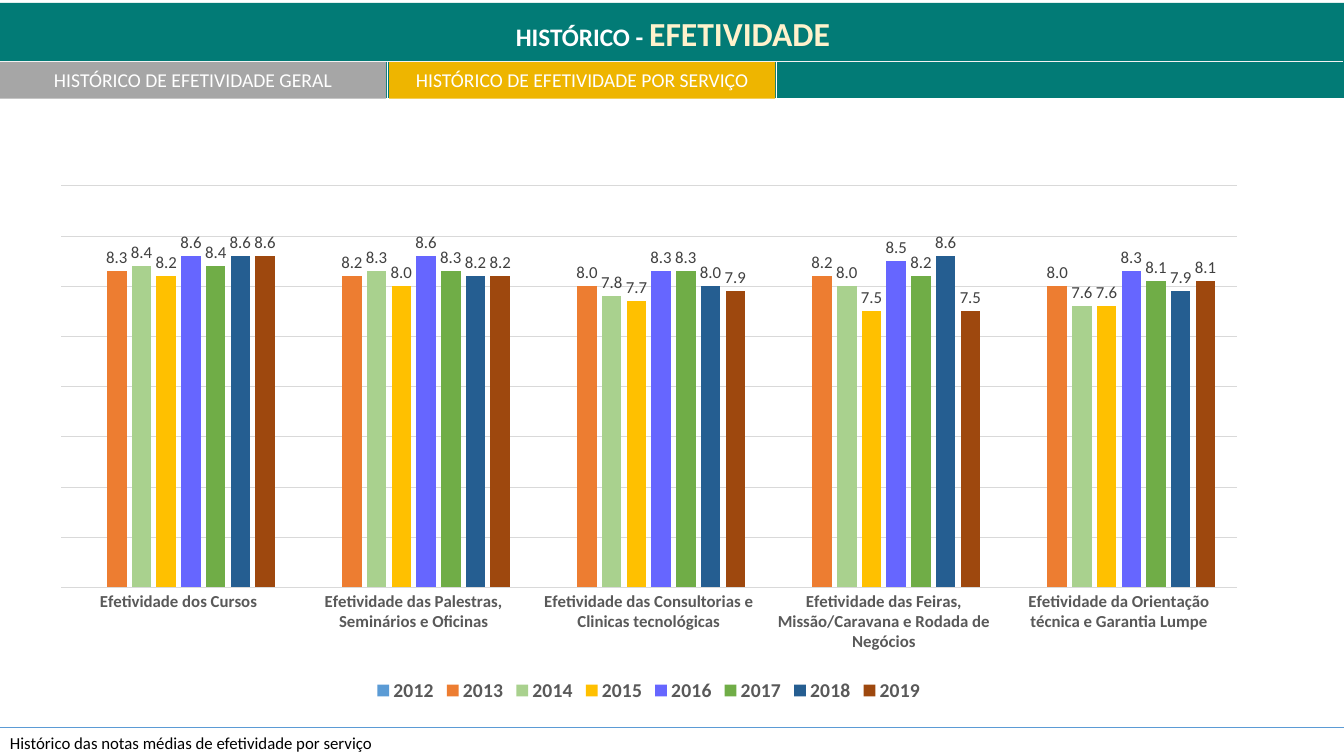
from dataclasses import dataclass

from pptx import Presentation
from pptx import util as u
from pptx.chart import data as chart_data
from pptx.dml.color import RGBColor
from pptx.enum import chart as ch
from pptx.enum import shapes, text
from pptx.oxml import parse_xml
from pptx.oxml.ns import nsdecls

FONT = "Calibri"
TEAL = RGBColor(0x02, 0x7B, 0x76)
GREY = RGBColor(0xA6, 0xA6, 0xA6)
GOLD = RGBColor(0xEE, 0xB5, 0x00)
CREAM = RGBColor(0xFF, 0xF2, 0xCC)
WHITE = RGBColor(0xFF, 0xFF, 0xFF)
OFF_WHITE = RGBColor(0xF2, 0xF2, 0xF2)
BLACK = RGBColor(0, 0, 0)
BLUE = RGBColor(0x5B, 0x9B, 0xD5)
GRID = RGBColor(0xD9, 0xD9, 0xD9)
AXIS_TEXT = RGBColor(0x59, 0x59, 0x59)
LABEL_TEXT = RGBColor(0x40, 0x40, 0x40)


@dataclass
class Tab:
    left: float
    label: str
    color: RGBColor


@dataclass
class Rule:
    start: tuple[float, float]
    end: tuple[float, float]
    color: RGBColor
    width: float


@dataclass
class Year:
    name: str
    scores: tuple[float | None, ...]
    color: RGBColor


def divider(x: float) -> Rule:
    return Rule((x, 0.99), (x, 0.62), WHITE, 0.5)


FOOTER_RULE = Rule((0, 7.22), (13.33, 7.22), BLUE, 0.5)
HEADER_BOTTOM = Rule((-0.03, 0.99), (13.34, 0.99), WHITE, 3)
TITLE_RULE = Rule((-0.02, 0.61), (13.32, 0.61), OFF_WHITE, 1)
GENERAL_TAB = Tab(0, "HISTÓRICO DE EFETIVIDADE GERAL", GREY)
SERVICE_TAB = Tab(3.86, "HISTÓRICO DE EFETIVIDADE POR SERVIÇO", GOLD)

SERVICES = (
    "Efetividade dos Cursos",
    "Efetividade das Palestras, Seminários e Oficinas",
    "Efetividade das Consultorias e Clinicas tecnológicas",
    "Efetividade das Feiras, Missão/Caravana e Rodada de Negócios",
    "Efetividade da Orientação técnica e Garantia Lumpe",
)
YEARS = (
    Year("2012", (None,) * 5, BLUE),
    Year("2013", (8.3, 8.2, 8.0, 8.2, 8.0), RGBColor(0xED, 0x7D, 0x31)),
    Year("2014", (8.4, 8.3, 7.8, 8.0, 7.6), RGBColor(0xA9, 0xD1, 0x8E)),
    Year("2015", (8.2, 8.0, 7.7, 7.5, 7.6), RGBColor(0xFF, 0xC0, 0x00)),
    Year("2016", (8.6, 8.6, 8.3, 8.5, 8.3), RGBColor(0x66, 0x66, 0xFF)),
    Year("2017", (8.4, 8.3, 8.3, 8.2, 8.1), RGBColor(0x70, 0xAD, 0x47)),
    Year("2018", (8.6, 8.2, 8.0, 8.6, 7.9), RGBColor(0x25, 0x5E, 0x91)),
    Year("2019", (8.6, 8.2, 7.9, 7.5, 8.1), RGBColor(0x9E, 0x48, 0x0E)),
)


def style(font, size: float, color: RGBColor, bold: bool = False) -> None:
    font.name = FONT
    font.size = u.Pt(size)
    font.bold = bold
    font.color.rgb = color


def add_block(page, left: float, top: float, width: float, height: float, color: RGBColor):
    block = page.shapes.add_shape(
        shapes.MSO_SHAPE.RECTANGLE,
        u.Inches(left), u.Inches(top), u.Inches(width), u.Inches(height),
    )
    block.shadow.inherit = False
    block.fill.solid()
    block.fill.fore_color.rgb = color
    block.line.fill.background()
    return block


def add_tab(page, tab: Tab) -> None:
    frame = add_block(page, tab.left, 0.61, 3.83, 0.37, tab.color).text_frame
    frame.vertical_anchor = text.MSO_ANCHOR.MIDDLE
    para = frame.paragraphs[0]
    para.text = tab.label
    para.alignment = text.PP_ALIGN.CENTER
    style(para.runs[0].font, 14, WHITE)


def add_rule(page, rule: Rule) -> None:
    line = page.shapes.add_connector(
        shapes.MSO_CONNECTOR.STRAIGHT,
        *(u.Inches(value) for value in (*rule.start, *rule.end)),
    )
    line.line.color.rgb = rule.color
    line.line.width = u.Pt(rule.width)
    line.element.spPr.append(parse_xml(f"<a:effectLst {nsdecls('a')}/>"))


def format_title(title) -> None:
    title.left, title.top = u.Inches(0.01), u.Inches(0.08)
    title.width, title.height = u.Inches(13.33), u.Inches(0.5)
    frame = title.text_frame
    frame.auto_size = text.MSO_AUTO_SIZE.NONE
    frame.vertical_anchor = text.MSO_ANCHOR.TOP
    para = frame.paragraphs[0]
    para.alignment = text.PP_ALIGN.CENTER
    for words, size, color in (("HISTÓRICO - ", 18, WHITE), ("EFETIVIDADE", 24, CREAM)):
        span = para.add_run()
        span.text = words
        style(span.font, size, color, True)


def add_footer(page) -> None:
    box = page.shapes.add_textbox(u.Inches(0), u.Inches(7.22), u.Inches(13.33), u.Inches(0.3))
    box.text_frame.word_wrap = True
    para = box.text_frame.paragraphs[0]
    para.text = "Histórico das notas médias de efetividade por serviço"
    style(para.runs[0].font, 12, BLACK)


def place_plot(chart, x: float, y: float, width: float, height: float) -> None:
    area = chart.element.xpath(".//c:plotArea")[0]
    for layout in area.xpath("c:layout"):
        area.remove(layout)
    area.insert(0, parse_xml(
        f"<c:layout {nsdecls('c')}><c:manualLayout>"
        '<c:layoutTarget val="inner"/><c:xMode val="edge"/><c:yMode val="edge"/>'
        f'<c:x val="{x}"/><c:y val="{y}"/><c:w val="{width}"/><c:h val="{height}"/>'
        "</c:manualLayout></c:layout>"
    ))


def add_score_chart(page) -> None:
    scores = chart_data.CategoryChartData(number_format="0.0")
    scores.categories = SERVICES
    for year in YEARS:
        scores.add_series(year.name, year.scores)
    chart = page.shapes.add_chart(
        ch.XL_CHART_TYPE.COLUMN_CLUSTERED,
        u.Inches(0.45), u.Inches(1.69), u.Inches(11.97), u.Inches(5.32), scores,
    ).chart
    style(chart.font, 10, BLACK)
    chart.has_title = False
    chart.has_legend = True
    chart.legend.position = ch.XL_LEGEND_POSITION.BOTTOM
    chart.legend.include_in_layout = False
    style(chart.legend.font, 14, AXIS_TEXT, True)

    services = chart.category_axis
    services.major_tick_mark = ch.XL_TICK_MARK.NONE
    services.format.line.color.rgb = GRID
    services.format.line.width = u.Pt(0.75)
    style(services.tick_labels.font, 12, AXIS_TEXT, True)

    scale = chart.value_axis
    scale.visible = False
    scale.minimum_scale, scale.maximum_scale, scale.major_unit = 2, 10, 1
    scale.has_major_gridlines = True
    scale.major_gridlines.format.line.color.rgb = GRID
    scale.major_gridlines.format.line.width = u.Pt(0.75)

    plot = chart.plots[0]
    plot.gap_width, plot.overlap, plot.vary_by_categories = 219, -27, False
    for series, year in zip(plot.series, YEARS):
        series.format.fill.solid()
        series.format.fill.fore_color.rgb = year.color
        labels = series.data_labels
        labels.show_value = True
        labels.position = ch.XL_LABEL_POSITION.OUTSIDE_END
        labels.number_format = "0.0"
        labels.number_format_is_linked = False
        style(labels.font, 12, LABEL_TEXT)
    place_plot(chart, 0.013, 0.029, 0.974, 0.749)


def main() -> None:
    deck = Presentation()
    deck.slide_width, deck.slide_height = u.Inches(13.33), u.Inches(7.5)
    page = deck.slides.add_slide(deck.slide_layouts[5])
    title = page.shapes.title
    format_title(title)
    header = add_block(page, 0, 0.03, 13.34, 0.97, TEAL)
    title.element.addprevious(header.element)
    for rule in (FOOTER_RULE, divider(3.82), HEADER_BOTTOM):
        add_rule(page, rule)
    add_tab(page, GENERAL_TAB)
    add_footer(page)
    add_rule(page, divider(3.84))
    add_tab(page, SERVICE_TAB)
    add_rule(page, TITLE_RULE)
    add_score_chart(page)
    add_rule(page, divider(7.7))
    deck.save("out.pptx")


if __name__ == "__main__":
    main()
